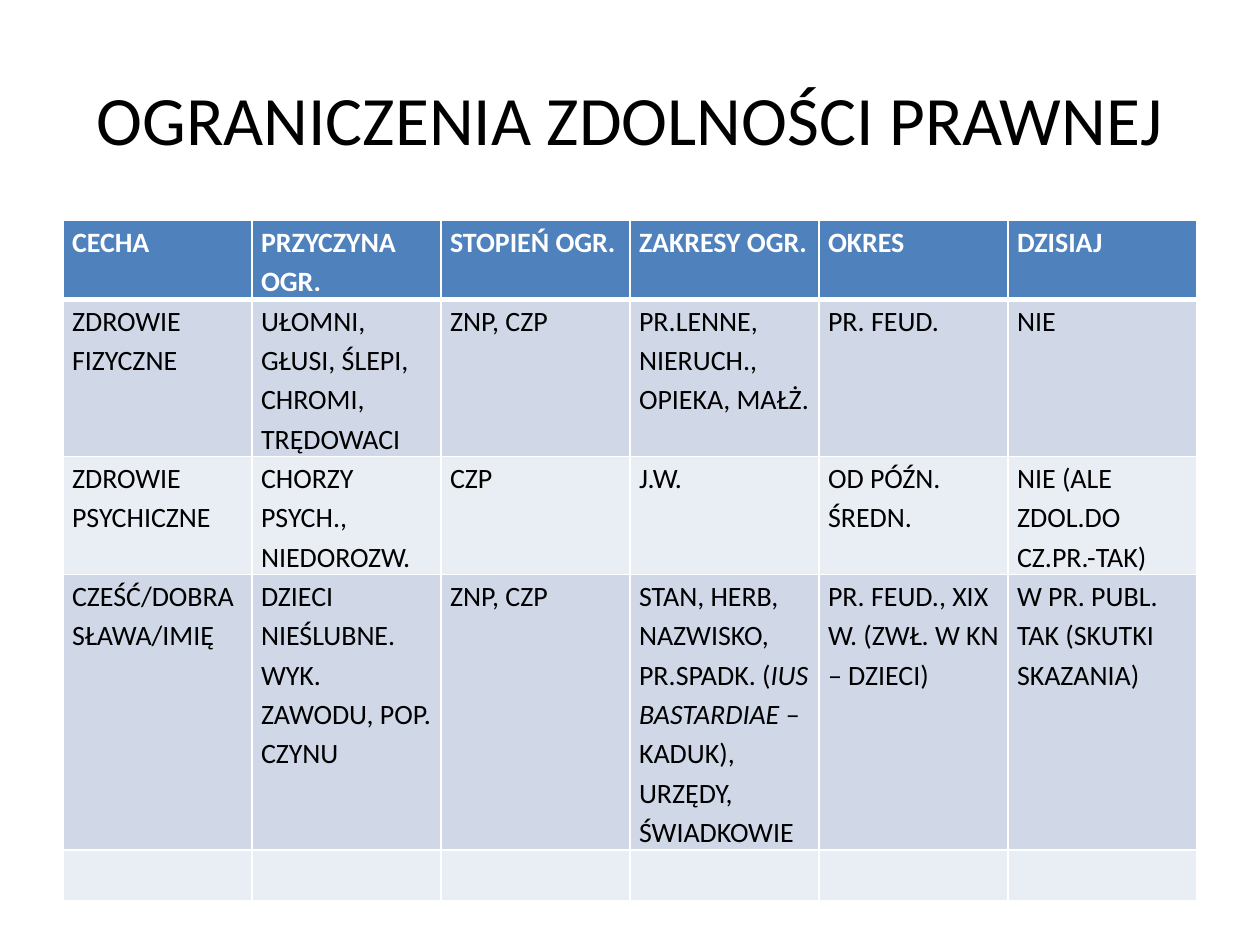
from lxml.etree import SubElement
from pptx import Presentation
from pptx.dml.color import RGBColor
from pptx.enum.text import MSO_ANCHOR, MSO_AUTO_SIZE, PP_ALIGN
from pptx.oxml.ns import qn
from pptx.util import Pt

TITLE = "OGRANICZENIA ZDOLNOŚCI PRAWNEJ"
HEADERS = ["CECHA", "PRZYCZYNA OGR.", "STOPIEŃ OGR.", "ZAKRESY OGR.", "OKRES", "DZISIAJ"]
# "\n" starts a paragraph; a tuple holds runs that alternate upright and italic.
ROWS = [
    ["ZDROWIE FIZYCZNE", "UŁOMNI, GŁUSI, ŚLEPI, CHROMI, TRĘDOWACI", "ZNP, CZP",
     "PR.LENNE, NIERUCH., OPIEKA, MAŁŻ.", "PR. FEUD.", "NIE"],
    ["ZDROWIE\nPSYCHICZNE", "CHORZY PSYCH., NIEDOROZW.", "CZP",
     "J.W.", "OD PÓŹN. ŚREDN.", "NIE (ALE ZDOL.DO CZ.PR.-TAK)"],
    ["CZEŚĆ/DOBRA SŁAWA/IMIĘ", "DZIECI NIEŚLUBNE. WYK. ZAWODU, POP. CZYNU", "ZNP, CZP",
     ("STAN, HERB, NAZWISKO, PR.SPADK. (", "IUS BASTARDIAE ", "– KADUK), URZĘDY, ŚWIADKOWIE"),
     "PR. FEUD., XIX W. (ZWŁ. W KN – DZIECI)", "W PR. PUBL. TAK (SKUTKI SKAZANIA)"],
    [""] * len(HEADERS),
]

THEME = {
    "font": "Calibri", "title_size": 39.6, "cell_size": 16,
    "text": "000000", "header_text": "FFFFFF", "header_fill": "4F81BD",
    "bands": ["D0D8E8", "E9EDF4"], "border": "FFFFFF",
}
LEFT, WIDTH = 36, 648
TITLE_TOP, TITLE_HEIGHT = 22.5, 90
TABLE_TOP, TABLE_HEIGHT, ROW_HEIGHT = 126, 382.5, 29.2
CELL_INSET = 5.2
THIN, THICK = 1, 3


def add_run(paragraph, text, size, color, bold=False, italic=False):
    run = paragraph.add_run()
    run.text = text
    run.font.name = THEME["font"]
    run.font.size = Pt(size)
    run.font.color.rgb = RGBColor.from_string(color)
    run.font.bold = bold
    run.font.italic = italic


def set_borders(cell, top, bottom):
    """Must run before the cell's fill is set: the schema puts lines first."""
    properties = cell._tc.get_or_add_tcPr()
    for side, width in (("L", THIN), ("R", THIN), ("T", top), ("B", bottom)):
        line = SubElement(properties, qn(f"a:ln{side}"), w=str(Pt(width)))
        fill = SubElement(line, qn("a:solidFill"))
        SubElement(fill, qn("a:srgbClr"), val=THEME["border"])


def write_cell(cell, content, color, bold):
    cell.margin_left = cell.margin_right = Pt(CELL_INSET)
    cell.margin_top = cell.margin_bottom = 0
    paragraphs = [content] if isinstance(content, tuple) else [(part,) for part in content.split("\n")]
    frame = cell.text_frame
    for number, runs in enumerate(paragraphs):
        paragraph = frame.add_paragraph() if number else frame.paragraphs[0]
        paragraph.line_spacing = 1.15
        for position, text in enumerate(runs):
            add_run(paragraph, text, THEME["cell_size"], color, bold, italic=position % 2 == 1)


def add_title(slide):
    title = slide.shapes.title
    title.left, title.top = Pt(LEFT), Pt(TITLE_TOP)
    title.width, title.height = Pt(WIDTH), Pt(TITLE_HEIGHT)
    frame = title.text_frame
    frame.word_wrap = True
    frame.auto_size = MSO_AUTO_SIZE.NONE
    frame.vertical_anchor = MSO_ANCHOR.MIDDLE
    frame.paragraphs[0].alignment = PP_ALIGN.CENTER
    add_run(frame.paragraphs[0], TITLE, THEME["title_size"], THEME["text"])


def add_limits_table(slide):
    grid = [HEADERS] + ROWS
    table_frame = slide.shapes.add_table(
        len(grid), len(HEADERS), Pt(LEFT), Pt(TABLE_TOP), Pt(WIDTH), Pt(TABLE_HEIGHT))
    table = table_frame.table
    for row_number, row in enumerate(grid):
        table.rows[row_number].height = Pt(ROW_HEIGHT)
        is_header = row_number == 0
        fill = THEME["header_fill"] if is_header else THEME["bands"][(row_number - 1) % 2]
        color = THEME["header_text"] if is_header else THEME["text"]
        for column_number, content in enumerate(row):
            cell = table.cell(row_number, column_number)
            set_borders(cell, THICK if row_number == 1 else THIN, THICK if is_header else THIN)
            cell.fill.solid()
            cell.fill.fore_color.rgb = RGBColor.from_string(fill)
            if content:
                write_cell(cell, content, color, bold=is_header)
    table_frame.height = Pt(TABLE_HEIGHT)


def main():
    presentation = Presentation()
    presentation.slide_width, presentation.slide_height = Pt(720), Pt(540)
    slide = presentation.slides.add_slide(presentation.slide_layouts.get_by_name("Title Only"))
    add_title(slide)
    add_limits_table(slide)
    presentation.save("out.pptx")


if __name__ == "__main__":
    main()
